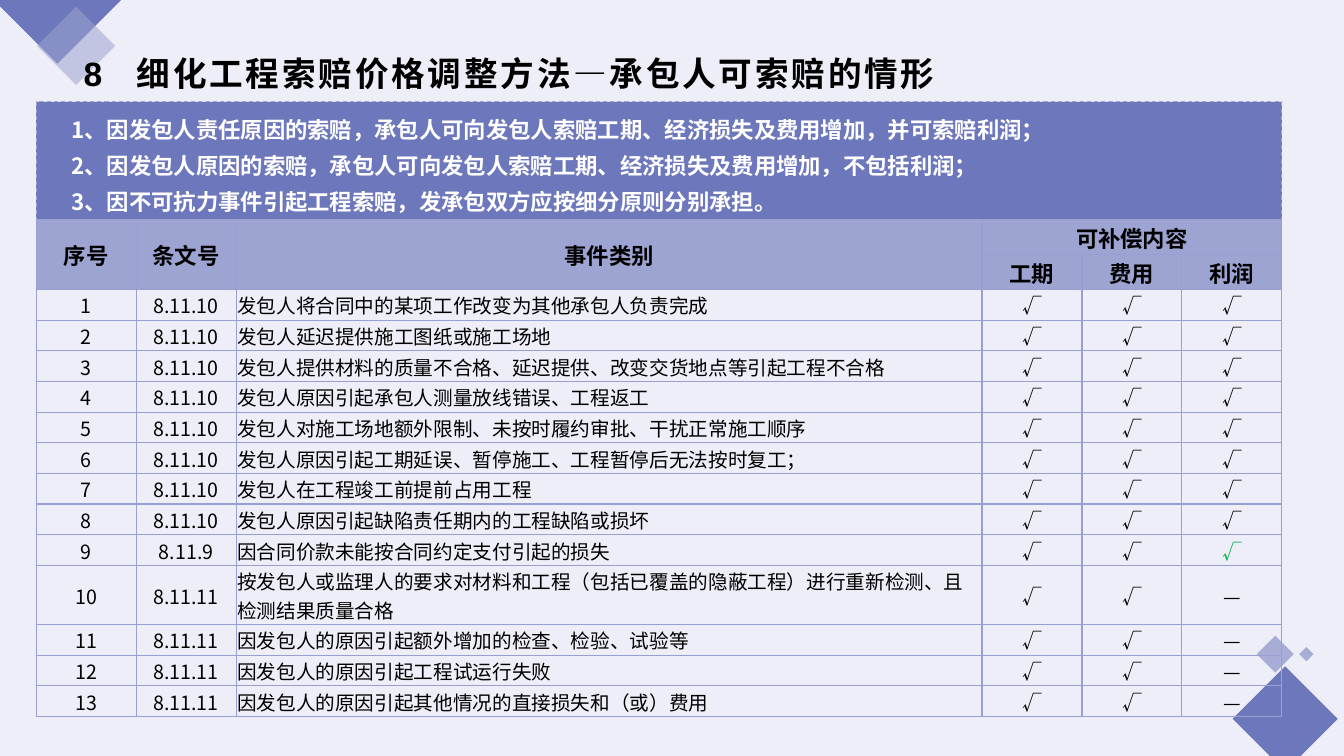
from dataclasses import dataclass

from lxml.etree import SubElement
from pptx import Presentation
from pptx.dml.color import RGBColor
from pptx.enum.dml import MSO_LINE
from pptx.enum.shapes import MSO_SHAPE as Shape
from pptx.enum.text import MSO_ANCHOR as Anchor, PP_ALIGN as Align
from pptx.oxml.ns import qn
from pptx.util import Pt


@dataclass(frozen=True)
class Theme:
    background: str = "EDEEF7"
    primary: str = "6D77BB"
    secondary: str = "9EA4D2"
    border: str = "999FD2"
    text: str = "000000"
    inverse: str = "FFFFFF"
    highlight: str = "00B050"
    font: str = "Noto Sans CJK SC"
    title_font: str = "Arial"
    title_size: int = 24
    heading_size: int = 16
    body_size: int = 14


TICK, DASH = "√", "—"
TITLE = "8\t细化工程索赔价格调整方法—承包人可索赔的情形"
RULES = [
    "1、因发包人责任原因的索赔，承包人可向发包人索赔工期、经济损失及费用增加，并可索赔利润；",
    "2、因发包人原因的索赔，承包人可向发包人索赔工期、经济损失及费用增加，不包括利润；",
    "3、因不可抗力事件引起工程索赔，发承包双方应按细分原则分别承担。",
]
HEADINGS = ["序号", "条文号", "事件类别", "可补偿内容"]
COMPENSATIONS = ["工期", "费用", "利润"]
EVENTS = [
    ("8.11.10", "发包人将合同中的某项工作改变为其他承包人负责完成", TICK),
    ("8.11.10", "发包人延迟提供施工图纸或施工场地", TICK),
    ("8.11.10", "发包人提供材料的质量不合格、延迟提供、改变交货地点等引起工程不合格", TICK),
    ("8.11.10", "发包人原因引起承包人测量放线错误、工程返工", TICK),
    ("8.11.10", "发包人对施工场地额外限制、未按时履约审批、干扰正常施工顺序", TICK),
    ("8.11.10", "发包人原因引起工期延误、暂停施工、工程暂停后无法按时复工；", TICK),
    ("8.11.10", "发包人在工程竣工前提前占用工程", TICK),
    ("8.11.10", "发包人原因引起缺陷责任期内的工程缺陷或损坏", TICK),
    ("8.11.9", "因合同价款未能按合同约定支付引起的损失", TICK),
    ("8.11.11", "按发包人或监理人的要求对材料和工程（包括已覆盖的隐蔽工程）"
                "进行重新检测、且检测结果质量合格", DASH),
    ("8.11.11", "因发包人的原因引起额外增加的检查、检验、试验等", DASH),
    ("8.11.11", "因发包人的原因引起工程试运行失败", DASH),
    ("8.11.11", "因发包人的原因引起其他情况的直接损失和（或）费用", DASH),
]
LONG_EVENT, UNPAID_EVENT = 10, 9


def write(paragraph, text, font, size, color, bold=False, align=Align.LEFT,
          spacing=0, line_spacing=None, margin=0, indent=0):
    """Fill a paragraph with one run; every length is in points."""
    paragraph.alignment = align
    if line_spacing:
        paragraph.line_spacing = Pt(line_spacing)
    properties = paragraph._p.get_or_add_pPr()
    properties.set("marL", str(Pt(margin)))
    properties.set("indent", str(Pt(indent)))
    run = paragraph.add_run()
    run.text = text
    run.font.name, run.font.size, run.font.bold = font, Pt(size), bold
    run.font.color.rgb = RGBColor.from_string(color)
    run_properties = run._r.get_or_add_rPr()
    run_properties.set("spc", str(spacing * 100))
    SubElement(run_properties, qn("a:ea")).set("typeface", Theme.font)


class SlideBuilder:
    def __init__(self, slide, theme):
        self.slide, self.theme = slide, theme
        fill = slide.background.fill
        fill.solid()
        fill.fore_color.rgb = RGBColor.from_string(theme.background)

    def paint(self, shape, color, opacity=100):
        shape.shadow.inherit = False
        shape.fill.solid()
        shape.fill.fore_color.rgb = RGBColor.from_string(color)
        if opacity < 100:
            rgb = shape.fill._xPr.find(".//" + qn("a:srgbClr"))
            SubElement(rgb, qn("a:alpha")).set("val", str(opacity * 1000))
        shape.line.fill.background()

    def polygon(self, points, color):
        start, *others = [(Pt(x), Pt(y)) for x, y in points]
        builder = self.slide.shapes.build_freeform(*start)
        builder.add_line_segments(others, close=True)
        self.paint(builder.convert_to_shape(), color)

    def diamond(self, left, top, side, color):
        shape = self.slide.shapes.add_shape(
            Shape.RECTANGLE, Pt(left), Pt(top), Pt(side), Pt(side))
        shape.rotation = 45
        self.paint(shape, color, opacity=54)

    def title(self, text, left, top, width, height):
        box = self.slide.shapes.add_textbox(Pt(left), Pt(top), Pt(width), Pt(height))
        frame = box.text_frame
        frame.word_wrap, frame.vertical_anchor = True, Anchor.MIDDLE
        write(frame.paragraphs[0], text, self.theme.title_font, self.theme.title_size,
              self.theme.text, bold=True, spacing=2, margin=38, indent=-38)

    def panel(self, lines, left, top, width, height):
        shape = self.slide.shapes.add_shape(
            Shape.RECTANGLE, Pt(left), Pt(top), Pt(width), Pt(height))
        self.paint(shape, self.theme.primary)
        shape.line.color.rgb = RGBColor.from_string(self.theme.secondary)
        shape.line.width, shape.line.dash_style = Pt(0.75), MSO_LINE.DASH
        frame = shape.text_frame
        frame.word_wrap, frame.vertical_anchor = True, Anchor.MIDDLE
        for index, line in enumerate(lines):
            paragraph = frame.add_paragraph() if index else frame.paragraphs[0]
            write(paragraph, line, self.theme.font, self.theme.heading_size,
                  self.theme.inverse, bold=True, line_spacing=26, margin=18)

    def table(self, left, top, widths, heights):
        frame = self.slide.shapes.add_table(
            len(heights), len(widths), Pt(left), Pt(top), Pt(sum(widths)), Pt(sum(heights)))
        table = frame.table
        table.first_row = table.horz_banding = False
        for column, width in zip(table.columns, widths):
            column.width = Pt(width)
        for row, height in zip(table.rows, heights):
            row.height = Pt(height)
        for cell in table.iter_cells():
            self.style_cell(cell)
        return table

    def style_cell(self, cell):
        cell.margin_left = cell.margin_right = cell.margin_top = Pt(0.75)
        cell.margin_bottom = 0
        cell.vertical_anchor = Anchor.MIDDLE
        properties = cell._tc.get_or_add_tcPr()
        for edge in ("lnL", "lnR", "lnT", "lnB"):
            line = SubElement(properties, qn(f"a:{edge}"), w=str(Pt(1)))
            fill = SubElement(line, qn("a:solidFill"))
            SubElement(fill, qn("a:srgbClr"), val=self.theme.border)
        cell.fill.background()

    def header_cell(self, cell, text):
        cell.fill.solid()
        cell.fill.fore_color.rgb = RGBColor.from_string(self.theme.secondary)
        write(cell.text_frame.paragraphs[0], text, self.theme.font,
              self.theme.heading_size, self.theme.text, bold=True, align=Align.CENTER)

    def body_cell(self, cell, text, color=None, align=Align.CENTER):
        write(cell.text_frame.paragraphs[0], text, self.theme.font,
              self.theme.body_size, color or self.theme.text, align=align)


def add_claims_table(builder, left, top):
    heights = [25, 25] + [42.3 if number == LONG_EVENT else 21.9
                          for number in range(1, len(EVENTS) + 1)]
    table = builder.table(left, top, [71.4, 71.4, 532.8] + [71.4] * 3, heights)
    for column, heading in enumerate(HEADINGS):
        cell = table.cell(0, column)
        cell.merge(table.cell(0, 5) if column == 3 else table.cell(1, column))
        builder.header_cell(cell, heading)
    for column, name in enumerate(COMPENSATIONS, start=3):
        builder.header_cell(table.cell(1, column), name)
    for number, (clause, event, profit) in enumerate(EVENTS, start=1):
        for column, text in enumerate([str(number), clause, event, TICK, TICK, profit]):
            highlighted = number == UNPAID_EVENT and column == 5
            builder.body_cell(table.cell(number + 1, column), text,
                              color=builder.theme.highlight if highlighted else None,
                              align=Align.LEFT if column == 2 else Align.CENTER)


def main():
    presentation = Presentation()
    presentation.slide_width, presentation.slide_height = Pt(960), Pt(540)
    theme = Theme()
    builder = SlideBuilder(
        presentation.slides.add_slide(presentation.slide_layouts[6]), theme)

    builder.polygon([(918, 476), (955.5, 513.5), (929, 540), (907, 540), (880.5, 513.5)],
                    theme.primary)
    builder.diamond(901.5, 457.9, 18.7, theme.primary)
    builder.diamond(929.5, 463.7, 7.2, theme.primary)
    builder.polygon([(0, 0), (86.5, 0), (41, 45.5), (0, 4.5)], theme.primary)
    builder.diamond(34.6, 13, 39.6, theme.secondary)

    builder.title(TITLE, 52.6, 34.6, 854.6, 34.6)
    builder.panel(RULES, 25.9, 72.7, 889.8, 84.2)
    add_claims_table(builder, 25.9, 156.9)
    presentation.save("out.pptx")


if __name__ == "__main__":
    main()
